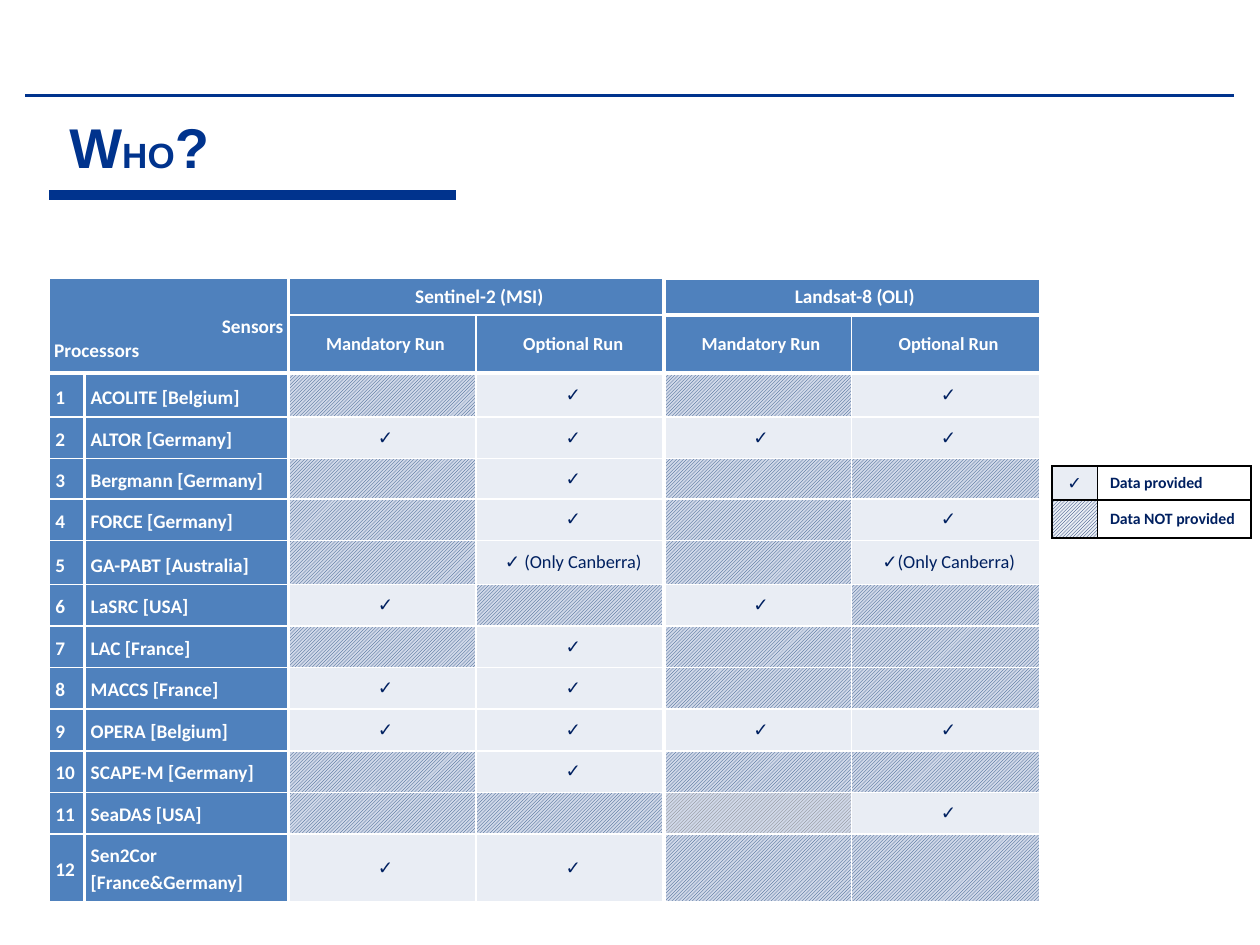
from dataclasses import dataclass

from lxml.etree import SubElement
from pptx import Presentation
from pptx.dml.color import RGBColor
from pptx.enum.dml import MSO_PATTERN
from pptx.enum.shapes import MSO_CONNECTOR
from pptx.enum.text import MSO_ANCHOR, MSO_AUTO_SIZE, PP_ALIGN
from pptx.oxml import parse_xml
from pptx.oxml.ns import nsdecls, qn
from pptx.util import Inches, Pt


@dataclass(frozen=True)
class Theme:
    """Colours, fonts and type sizes of the slide."""
    title: str = "00338D"
    header: str = "4F81BD"
    provided: str = "E9EDF4"
    missing: str = "D0D8E8"
    hatch: str = "1F497D"
    grey_hatch: str = "747678"
    ink: str = "002060"
    white: str = "FFFFFF"
    black: str = "000000"
    title_font: str = "Arial"
    body_font: str = "Calibri"
    large: float = 32
    small_caps: float = 20
    label: float = 11
    mark: float = 10.5
    legend_mark: float = 10
    legend: float = 9
    thin: float = 1
    thick: float = 2.25


T = Theme()
COLUMNS = [0.28, 1.62] + [1.49] * 4
ROWS = [0.29, 0.46, 0.35, 0.33, 0.32, 0.33, 0.35] + [0.33] * 6 + [0.54]
SENSORS = ["Sentinel-2 (MSI)", "Landsat-8 (OLI)"]
RUNS = ["Mandatory Run", "Optional Run"]
PROCESSORS = [
    ("ACOLITE [Belgium]", "|✓||✓"),
    ("ALTOR [Germany]", "✓|✓|✓|✓"),
    ("Bergmann [Germany]", "|✓||"),
    ("FORCE [Germany]", "|✓||✓"),
    ("GA-PABT [Australia]", "|✓ (Only Canberra)||✓(Only Canberra)"),
    ("LaSRC [USA]", "✓||✓|"),
    ("LAC [France]", "|✓||"),
    ("MACCS [France]", "✓|✓||"),
    ("OPERA [Belgium]", "✓|✓|✓|✓"),
    ("SCAPE-M [Germany]", "|✓||"),
    ("SeaDAS [USA]", "|||✓"),
    ("Sen2Cor [France&Germany]", "✓|✓||"),
]
FIXED_SPACING = {1: Pt(17.2), 5: Pt(17)}
GREY_CELL = (12, 4)


def assign(obj, **values):
    """Set each named attribute on an object."""
    for name, value in values.items():
        setattr(obj, name, value)


def style_font(font, size, color, name=T.body_font, bold=True):
    """Format a font."""
    assign(font, size=Pt(size), name=name, bold=bold)
    font.color.rgb = RGBColor.from_string(color)


def fill_cell(cell, color, hatch=None):
    """Fill a cell with a solid colour or with diagonal hatching."""
    if hatch:
        cell.fill.patterned()
        cell.fill.pattern = MSO_PATTERN.LIGHT_UPWARD_DIAGONAL
        cell.fill.fore_color.rgb = RGBColor.from_string(hatch)
        cell.fill.back_color.rgb = RGBColor.from_string(color)
    else:
        cell.fill.solid()
        cell.fill.fore_color.rgb = RGBColor.from_string(color)


def border_cell(cell, color, widths):
    """Draw the left, right, top and bottom borders of a cell."""
    tc_pr = cell._tc.get_or_add_tcPr()
    for i, (side, width) in enumerate(zip("LRTB", widths)):
        tc_pr.insert(i, parse_xml(
            f'<a:ln{side} {nsdecls("a")} w="{Pt(width)}"><a:solidFill>'
            f'<a:srgbClr val="{color}"/></a:solidFill></a:ln{side}>'))


def write_cell(cell, text, size, color, align=PP_ALIGN.CENTER, spacing=None,
               bold=True, side=0.1, edge=0.03):
    """Write one paragraph in a cell, keeping empty cells low."""
    assign(cell, vertical_anchor=MSO_ANCHOR.MIDDLE,
           margin_left=Inches(side), margin_right=Inches(min(side, 0.05)),
           margin_top=Inches(edge), margin_bottom=Inches(edge))
    p = cell.text_frame.paragraphs[0]
    assign(p, alignment=align, line_spacing=spacing)
    if text:
        r = p.add_run()
        r.text = text
        style_font(r.font, size, color, bold=bold)
    else:
        SubElement(p._p, qn("a:endParaRPr"), sz=str(int(size * 100)))


def add_grid(slide, left, top, columns, rows):
    """Add a plain table with the given column widths and row heights."""
    frame = slide.shapes.add_table(
        len(rows), len(columns), Inches(left), Inches(top),
        Inches(sum(columns)), Inches(sum(rows)))
    table = frame.table
    assign(table, first_row=False, horz_banding=False)
    for column, width in zip(table.columns, columns):
        column.width = Inches(width)
    for row, height in zip(table.rows, rows):
        row.height = Inches(height)
    return table


def add_rule(slide, left, right, y, width):
    """Draw a horizontal rule."""
    line = slide.shapes.add_connector(
        MSO_CONNECTOR.STRAIGHT, Inches(left), Inches(y), Inches(right), Inches(y))
    line.line.width = Pt(width)
    line.line.color.rgb = RGBColor.from_string(T.title)
    SubElement(line._element.spPr, qn("a:effectLst"))


def add_title(slide, left, top, width, height):
    """Place the title with its rules above and below."""
    add_rule(slide, 0.2, 9.79, 0.76, 1.5)
    sp = slide.shapes.title
    assign(sp, left=Inches(left), top=Inches(top),
           width=Inches(width), height=Inches(height))
    tf = sp.text_frame
    assign(tf, vertical_anchor=MSO_ANCHOR.BOTTOM, auto_size=MSO_AUTO_SIZE.NONE,
           margin_left=Inches(0.16))
    p = tf.paragraphs[0]
    p.alignment = PP_ALIGN.LEFT
    for text, size in [("W", T.large), ("HO", T.small_caps), ("?", T.large)]:
        r = p.add_run()
        r.text = text
        style_font(r.font, size, T.title, T.title_font)
    add_rule(slide, left, left + 3.23, top + 0.71, 5.5)


def fill_headers(table):
    """Write the two header rows with their merged cells."""
    corner = table.cell(0, 0)
    corner.merge(table.cell(1, 1))
    write_cell(corner, "Sensors", T.label, T.white, PP_ALIGN.RIGHT, side=0.04, edge=0)
    assign(corner, vertical_anchor=MSO_ANCHOR.BOTTOM, margin_bottom=Inches(0.08))
    p = corner.text_frame.add_paragraph()
    p.alignment = PP_ALIGN.LEFT
    r = p.add_run()
    r.text = "Processors"
    style_font(r.font, T.label, T.white)
    for i, sensor in enumerate(SENSORS):
        first = 2 + 2 * i
        table.cell(0, first).merge(table.cell(0, first + 1))
        write_cell(table.cell(0, first), sensor, T.label, T.white)
        for j, run in enumerate(RUNS):
            write_cell(table.cell(1, first + j), run, T.mark, T.white)
    for row in range(2):
        for column in range(len(COLUMNS)):
            fill_cell(table.cell(row, column), T.header)


def add_processors(slide, left, top):
    """Build the table of processors by sensor and run."""
    table = add_grid(slide, left, top, COLUMNS, ROWS)
    fill_headers(table)
    for n, (name, marks) in enumerate(PROCESSORS, 1):
        row = n + 1
        for column, text in enumerate([str(n), name]):
            cell = table.cell(row, column)
            write_cell(cell, text, T.label, T.white, PP_ALIGN.LEFT,
                       FIXED_SPACING.get(n, 1.15), side=0.05, edge=0.05)
            fill_cell(cell, T.header)
        for column, text in enumerate(marks.split("|"), 2):
            cell = table.cell(row, column)
            write_cell(cell, text, T.mark, T.ink, bold=text == "✓")
            hatch = T.grey_hatch if (row, column) == GREY_CELL else T.hatch
            fill_cell(cell, *([T.provided] if text else [T.missing, hatch]))
    for row in range(len(ROWS)):
        for column in range(len(COLUMNS)):
            cell = table.cell(row, column)
            right = column + cell.span_width
            bottom = row + cell.span_height
            thick = [column in (1, 2, 4), right in (1, 2, 4)]
            thick += [y == 2 or (y < 2 and column >= 4) for y in (row, bottom)]
            border_cell(cell, T.white, [T.thick if t else T.thin for t in thick])


def add_legend(slide, left, top):
    """Build the key to the marks and the hatching."""
    table = add_grid(slide, left, top, [0.36, 1.22], [0.27, 0.3])
    for row, (mark, text) in enumerate(
            [("✓", "Data provided"), ("", "Data NOT provided")]):
        key, label = table.cell(row, 0), table.cell(row, 1)
        write_cell(key, mark, T.legend_mark, T.ink, side=0.05)
        fill_cell(key, T.provided, None if mark else T.ink)
        write_cell(label, text, T.legend, T.ink, PP_ALIGN.LEFT)
        fill_cell(label, T.white)
        for cell in (key, label):
            border_cell(cell, T.black, [T.thin] * 4)


def main():
    """Build and save the slide."""
    prs = Presentation()
    assign(prs, slide_width=Inches(10), slide_height=Inches(7.5))
    slide = prs.slides.add_slide(prs.slide_layouts[5])
    add_title(slide, 0.39, 0.84, 6.05, 0.64)
    add_processors(slide, 0.39, 2.21)
    add_legend(slide, 8.35, 3.7)
    prs.save("out.pptx")


if __name__ == "__main__":
    main()
